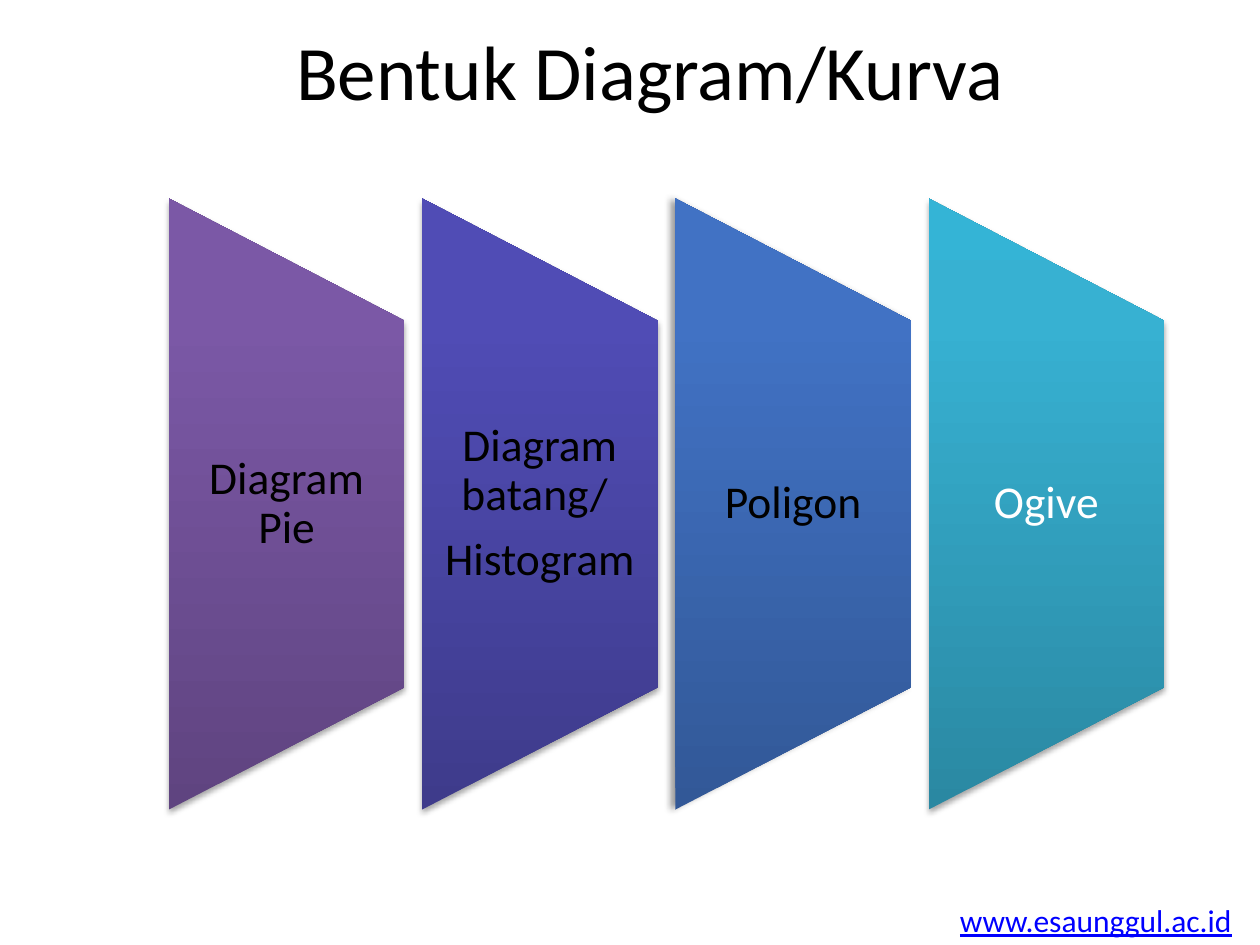
from lxml import etree
from pptx import Presentation
from pptx.dml.color import RGBColor as RGB
from pptx.enum.shapes import MSO_SHAPE as SHAPE
from pptx.enum.text import MSO_ANCHOR as ANCHOR, PP_ALIGN as ALIGN
from pptx.oxml import parse_xml
from pptx.oxml.ns import nsdecls, qn
from pptx.util import Inches, Pt

COLORS = {"text": "000000", "light": "FFFFFF", "link": "0000FF", "shadow": "000000"}
SOFT_SHADOW = (35, 3.15, 1.8, 90)
SIDE_SHADOW = (40, 4, 3, 180)
PANELS = [
    (["Diagram Pie"], "text", ("5F4480", "7B58A6", "7C57A8"), SOFT_SHADOW),
    (["Diagram batang/ ", "Histogram"], "text", ("3E3B8B", "504CB5", "4F4BB8"), SOFT_SHADOW),
    (["Poligon"], "text", ("325897", "4172C4", "3F72C7"), SIDE_SHADOW),
    (["Ogive"], "light", ("2A88A2", "37B1D2", "34B4D6"), SOFT_SHADOW),
]
LEFT, PITCH, WIDTH, HEIGHT, MIDDLE = 1.34, 2.01, 1.87, 4.85, 4.0
LABEL_HEIGHT = 2.91


def add_run(p, text, size, color):
    """Add a Calibri run to a paragraph."""
    r = p.add_run()
    r.text = text
    r.font.name = "Calibri"
    r.font.size = Pt(size)
    r.font.color.rgb = RGB.from_string(COLORS[color])
    return r


def set_gradient(sp, colors):
    """Fill a shape with a gradient that runs up the slide."""
    stops = "".join(
        f'<a:gs pos="{pos * 1000}"><a:srgbClr val="{color}"/></a:gs>'
        for pos, color in zip((0, 80, 100), colors)
    )
    sp._element.spPr.find(qn("a:prstGeom")).addnext(parse_xml(
        f'<a:gradFill {nsdecls("a")} rotWithShape="0"><a:gsLst>{stops}</a:gsLst>'
        '<a:lin ang="16200000" scaled="0"/></a:gradFill>'
    ))


def set_shadow(sp, alpha, blur, dist, angle):
    """Give a shape an outer shadow."""
    sp.shadow.inherit = False
    effects = sp._element.spPr.find(qn("a:effectLst"))
    shadow = etree.SubElement(
        effects, qn("a:outerShdw"), blurRad=str(Pt(blur)), dist=str(Pt(dist)),
        dir=str(angle * 60000), rotWithShape="0",
    )
    color = etree.SubElement(shadow, qn("a:srgbClr"), val=COLORS["shadow"])
    etree.SubElement(color, qn("a:alpha"), val=str(alpha * 1000))


def add_panel(s, x, colors, shadow):
    """Add a trapezoid turned so that its long side is on the left."""
    sp = s.shapes.add_shape(
        SHAPE.FLOWCHART_MANUAL_OPERATION,
        Inches(x + (WIDTH - HEIGHT) / 2), Inches(MIDDLE - WIDTH / 2),
        Inches(HEIGHT), Inches(WIDTH),
    )
    sp.rotation = 270
    sp.line.fill.background()
    set_gradient(sp, colors)
    set_shadow(sp, *shadow)


def add_label(s, x, lines, color):
    """Add the upright label of a panel."""
    tf = s.shapes.add_textbox(
        Inches(x), Inches(MIDDLE - LABEL_HEIGHT / 2), Inches(WIDTH), Inches(LABEL_HEIGHT)
    ).text_frame
    tf.word_wrap = True
    tf.vertical_anchor = ANCHOR.MIDDLE
    tf.margin_left = tf.margin_right = Inches(0.18)
    tf.margin_top = tf.margin_bottom = 0
    for i, line in enumerate(lines):
        p = tf.add_paragraph() if i else tf.paragraphs[0]
        p.alignment = ALIGN.CENTER
        p.line_spacing = 0.9
        p.space_after = Pt(9.1)
        add_run(p, line, 26, color)


def add_title(s, text):
    """Place and fill the title placeholder."""
    title = s.shapes.title
    title.left, title.top = Inches(0.55), Inches(0.08)
    title.width, title.height = Inches(9.22), Inches(0.94)
    tf = title.text_frame
    tf.vertical_anchor = ANCHOR.MIDDLE
    p = tf.paragraphs[0]
    p.alignment = ALIGN.CENTER
    add_run(p, text, 44, "text")


def add_address(s, text):
    """Add the underlined web address in the corner."""
    tf = s.shapes.add_textbox(Inches(7.52), Inches(7.1), Inches(2.38), Inches(0.4)).text_frame
    tf.word_wrap = False
    r = add_run(tf.paragraphs[0], text, 18, "link")
    r.font.underline = True


def main():
    """Build the slide and save it."""
    prs = Presentation()
    prs.slide_width, prs.slide_height = Inches(10), Inches(7.5)
    s = prs.slides.add_slide(prs.slide_layouts[5])
    add_address(s, "www.esaunggul.ac.id")
    add_title(s, "Bentuk Diagram/Kurva")
    for i, (lines, color, gradient, shadow) in enumerate(PANELS):
        x = LEFT + i * PITCH
        add_panel(s, x, gradient, shadow)
        add_label(s, x, lines, color)
    prs.save("out.pptx")


if __name__ == "__main__":
    main()
